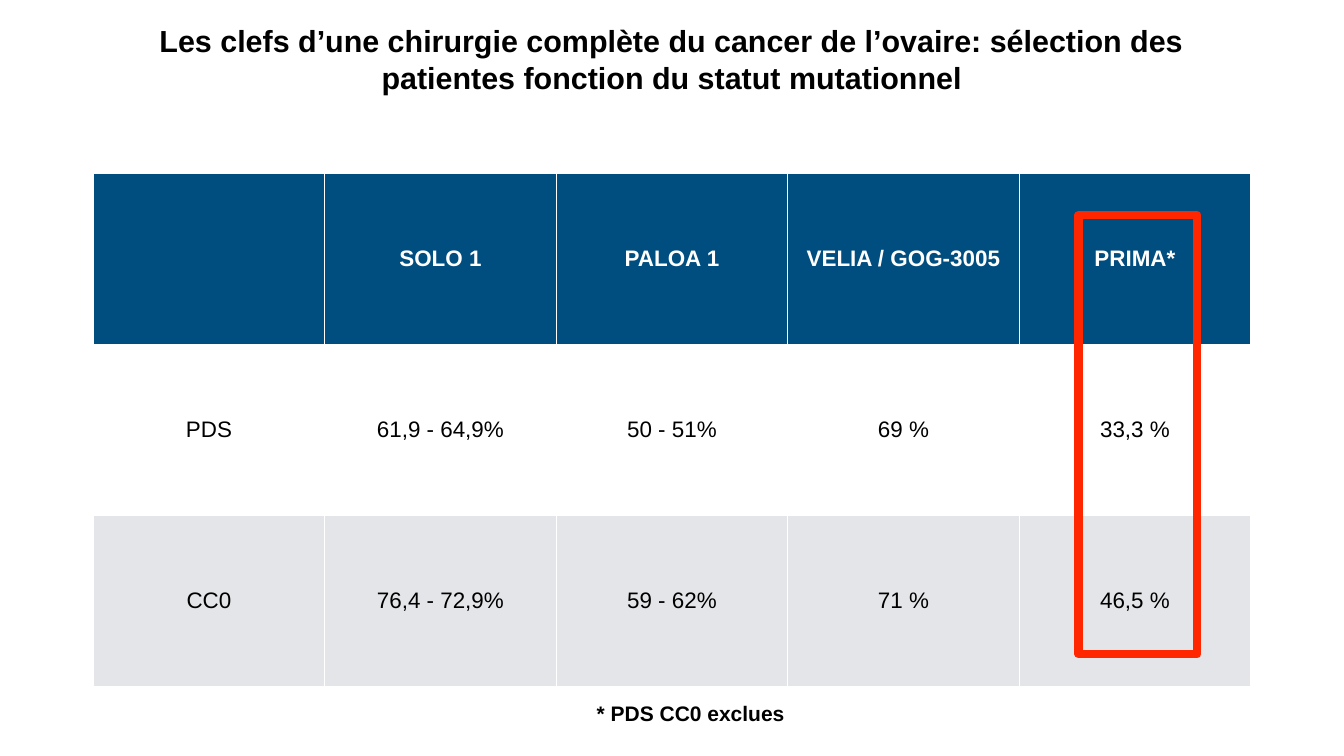
import pptx
import pptx.dml.color
import pptx.enum.shapes
import pptx.enum.text
import pptx.oxml
import pptx.oxml.ns
import pptx.util

WIDTH, HEIGHT = 26.67, 15
LEFT, CONTENT_WIDTH = 1.85, 22.97
INSET = pptx.util.Inches(0.06)
ROWS = [
    ["", "SOLO 1", "PALOA 1", "VELIA / GOG-3005", "PRIMA*"],
    ["PDS", "61,9 - 64,9%", "50 - 51%", "69 %", "33,3 %"],
    ["CC0", "76,4 - 72,9%", "59 - 62%", "71 %", "46,5 %"],
]
ROW_FILLS = ["004D80", "FFFFFF", "E3E5E8"]


def colour(code):
    return pptx.dml.color.RGBColor.from_string(code)


def inches(box):
    return [pptx.util.Inches(length) for length in box]


def apply(target, values):
    for name, value in values.items():
        setattr(target, name, value)


def write(frame, text, size, code, bold):
    para = frame.paragraphs[0]
    para.alignment = pptx.enum.text.PP_ALIGN.CENTER
    span = para.add_run()
    span.text = text
    apply(span.font, {"name": "Arial", "size": pptx.util.Pt(size), "bold": bold})
    span.font.color.rgb = colour(code)


def format_frame(frame, wrap):
    apply(frame, {
        "word_wrap": wrap,
        "auto_size": pptx.enum.text.MSO_AUTO_SIZE.NONE,
        "vertical_anchor": pptx.enum.text.MSO_ANCHOR.MIDDLE,
        "margin_left": INSET, "margin_right": INSET,
        "margin_top": INSET, "margin_bottom": INSET,
    })


def place_title(page, box):
    title = page.shapes.title
    apply(title, dict(zip(("left", "top", "width", "height"), inches(box))))
    format_frame(title.text_frame, True)
    write(title.text_frame,
          "Les clefs d’une chirurgie complète du cancer de l’ovaire: "
          "sélection des patientes fonction du statut mutationnel",
          43.5, "000000", True)


def place_table(page, box):
    table = page.shapes.add_table(len(ROWS), len(ROWS[0]), *inches(box)).table
    for row, (texts, fill) in enumerate(zip(ROWS, ROW_FILLS)):
        header = row == 0
        for column, text in enumerate(texts):
            cell = table.cell(row, column)
            cell.fill.solid()
            cell.fill.fore_color.rgb = colour(fill)
            apply(cell, {
                "vertical_anchor": pptx.enum.text.MSO_ANCHOR.MIDDLE,
                "margin_left": INSET, "margin_right": INSET,
                "margin_top": INSET, "margin_bottom": INSET,
            })
            if text:
                write(cell.text_frame, text, 32,
                      "FFFFFF" if header else "000000", header)


def place_footnote(page, box):
    frame = page.shapes.add_textbox(*inches(box)).text_frame
    format_frame(frame, False)
    write(frame, "* PDS CC0 exclues", 30, "000000", True)


def place_highlight(page, box):
    outline = page.shapes.add_shape(
        pptx.enum.shapes.MSO_SHAPE.RECTANGLE, *inches(box))
    outline.shadow.inherit = False
    outline.fill.background()
    outline.line.color.rgb = colour("FF2600")
    outline.line.width = pptx.util.Pt(12)
    line = outline.line._get_or_add_ln()
    line.append(pptx.oxml.parse_xml(
        f'<a:round {pptx.oxml.ns.nsdecls("a")}/>'))


def main():
    deck = pptx.Presentation()
    deck.slide_width, deck.slide_height = inches((WIDTH, HEIGHT))
    page = deck.slides.add_slide(deck.slide_layouts.get_by_name("Title Only"))
    place_title(page, (LEFT, 0.39, CONTENT_WIDTH, 1.55))
    place_table(page, (LEFT, 3.44, CONTENT_WIDTH, 10.17))
    place_footnote(page, (11.77, 13.84, 3.87, 0.61))
    place_highlight(page, (21.4, 4.27, 2.36, 8.71))
    deck.save("out.pptx")


if __name__ == "__main__":
    main()
